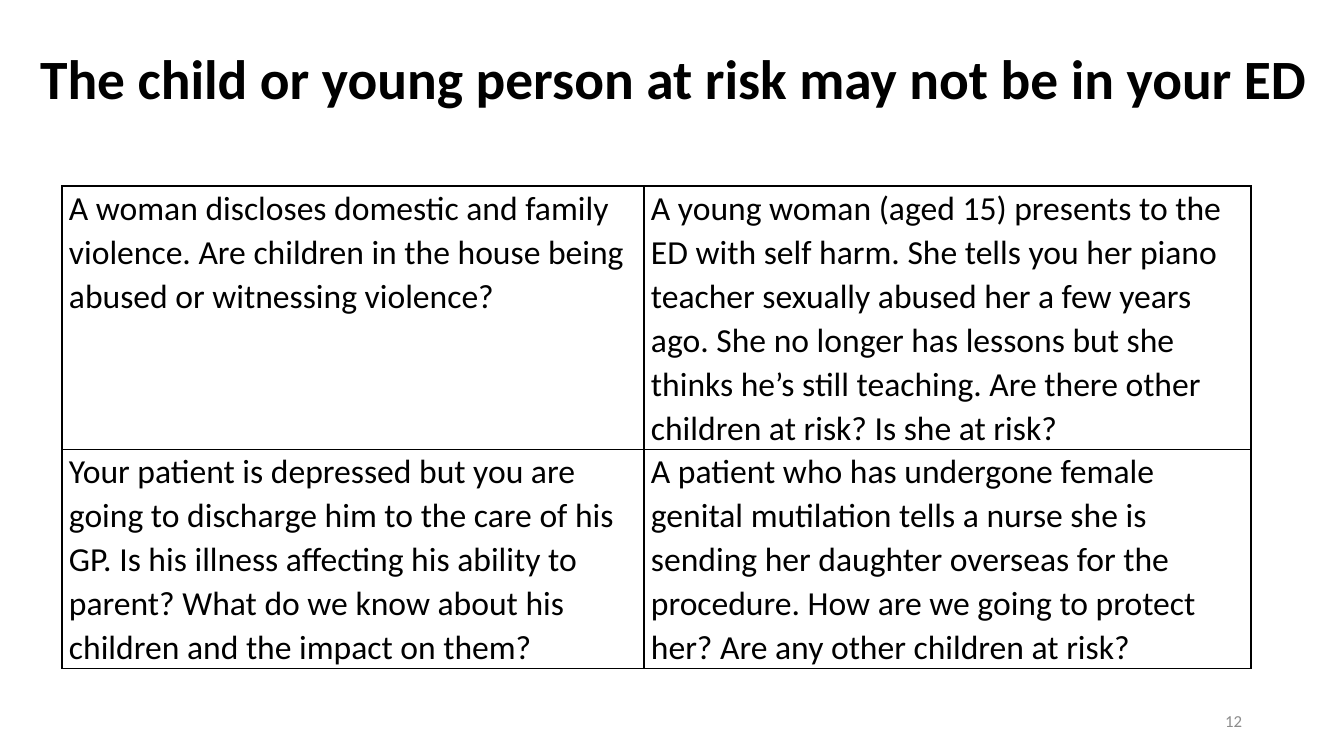
from dataclasses import dataclass

from lxml.etree import SubElement
from pptx import Presentation
from pptx.dml.color import RGBColor
from pptx.enum.text import MSO_ANCHOR as Anchor, PP_ALIGN as Align
from pptx.oxml.ns import qn
from pptx.util import Emu, Pt

PX_PER_INCH = 100.8


@dataclass(frozen=True)
class Theme:
    """Colours, font and type sizes of the deck."""
    ink: str = "000000"
    muted: str = "8C8C8C"
    paper: str = "FFFFFF"
    font: str = "Calibri"
    title_size: float = 39.6
    body_size: float = 24
    number_size: float = 12
    border_width: float = 1


THEME = Theme()

SCENARIOS = [
    ["A woman discloses domestic and family violence. Are children in the house "
     "being abused or witnessing violence?",
     "A young woman (aged 15) presents to the ED with self harm. She tells you her "
     "piano teacher sexually abused her a few years ago. She no longer has lessons "
     "but she thinks he’s still teaching. Are there other children at risk? "
     "Is she at risk?"],
    ["Your patient is depressed but you are going to discharge him to the care of "
     "his GP. Is his illness affecting his ability to parent? What do we know about "
     "his children and the impact on them?",
     "A patient who has undergone female genital mutilation tells a nurse she is "
     "sending her daughter overseas for the procedure. How are we going to protect "
     "her? Are any other children at risk?"],
]


def px(length):
    """Turn a length in px into EMU."""
    return Emu(round(length * 914400 / PX_PER_INCH))


def write_text(frame, text, size, color=THEME.ink, bold=False, align=Align.LEFT, spacing=1.0):
    """Write one formatted paragraph into a text frame."""
    frame.word_wrap = True
    para = frame.paragraphs[0]
    para.alignment = align
    para.line_spacing = spacing
    span = para.add_run()
    span.text = text
    span.font.name = THEME.font
    span.font.size = Pt(size)
    span.font.bold = bold
    span.font.color.rgb = RGBColor.from_string(color)


def add_title(page, text, box):
    """Place the page title at the upper part of its box."""
    title = page.shapes.title
    title.left, title.top, title.width, title.height = map(px, box)
    frame = title.text_frame
    frame.vertical_anchor = Anchor.TOP
    frame.margin_top = px(12)
    write_text(frame, text, THEME.title_size, bold=True, spacing=0.9)


def add_borders(cell):
    """Draw a thin line on all four sides of a cell."""
    properties = cell._tc.get_or_add_tcPr()
    for index, side in enumerate(("lnL", "lnR", "lnT", "lnB")):
        line = SubElement(properties, qn(f"a:{side}"), w=str(Pt(THEME.border_width)))
        fill = SubElement(line, qn("a:solidFill"))
        SubElement(fill, qn("a:srgbClr"), val=THEME.ink)
        properties.insert(index, line)


def add_scenarios(page, rows, box, column_widths, row_heights):
    """Place the bordered table of scenarios."""
    table = page.shapes.add_table(len(rows), len(rows[0]), *map(px, box)).table
    table.first_row = table.horz_banding = False
    for column, width in zip(table.columns, column_widths):
        column.width = px(width)
    for row, height, texts in zip(table.rows, row_heights, rows):
        row.height = px(height)
        for cell, text in zip(row.cells, texts):
            cell.margin_left = cell.margin_right = px(7)
            cell.margin_top = cell.margin_bottom = 0
            cell.fill.solid()
            cell.fill.fore_color.rgb = RGBColor.from_string(THEME.paper)
            add_borders(cell)
            write_text(cell.text_frame, text, THEME.body_size, spacing=1.07)


def add_page_number(page, number, box):
    """Place the page number at the right of its box."""
    frame = page.shapes.add_textbox(*map(px, box)).text_frame
    frame.vertical_anchor = Anchor.MIDDLE
    write_text(frame, str(number), THEME.number_size, color=THEME.muted, align=Align.RIGHT)


def build_scenario_page(deck):
    """Add the page with a title, four scenarios and a page number."""
    page = deck.slides.add_slide(deck.slide_layouts[5])
    add_title(page, "The child or young person at risk may not be in your ED", (30, 40, 1298, 146))
    add_scenarios(page, SCENARIOS, (62, 186, 1189, 475), (582, 607), (262, 218))
    add_page_number(page, 12, (950, 701, 302, 40))


def main():
    """Build and save the deck."""
    deck = Presentation()
    deck.slide_width, deck.slide_height = px(1344), px(756)
    build_scenario_page(deck)
    deck.save("out.pptx")


if __name__ == "__main__":
    main()
